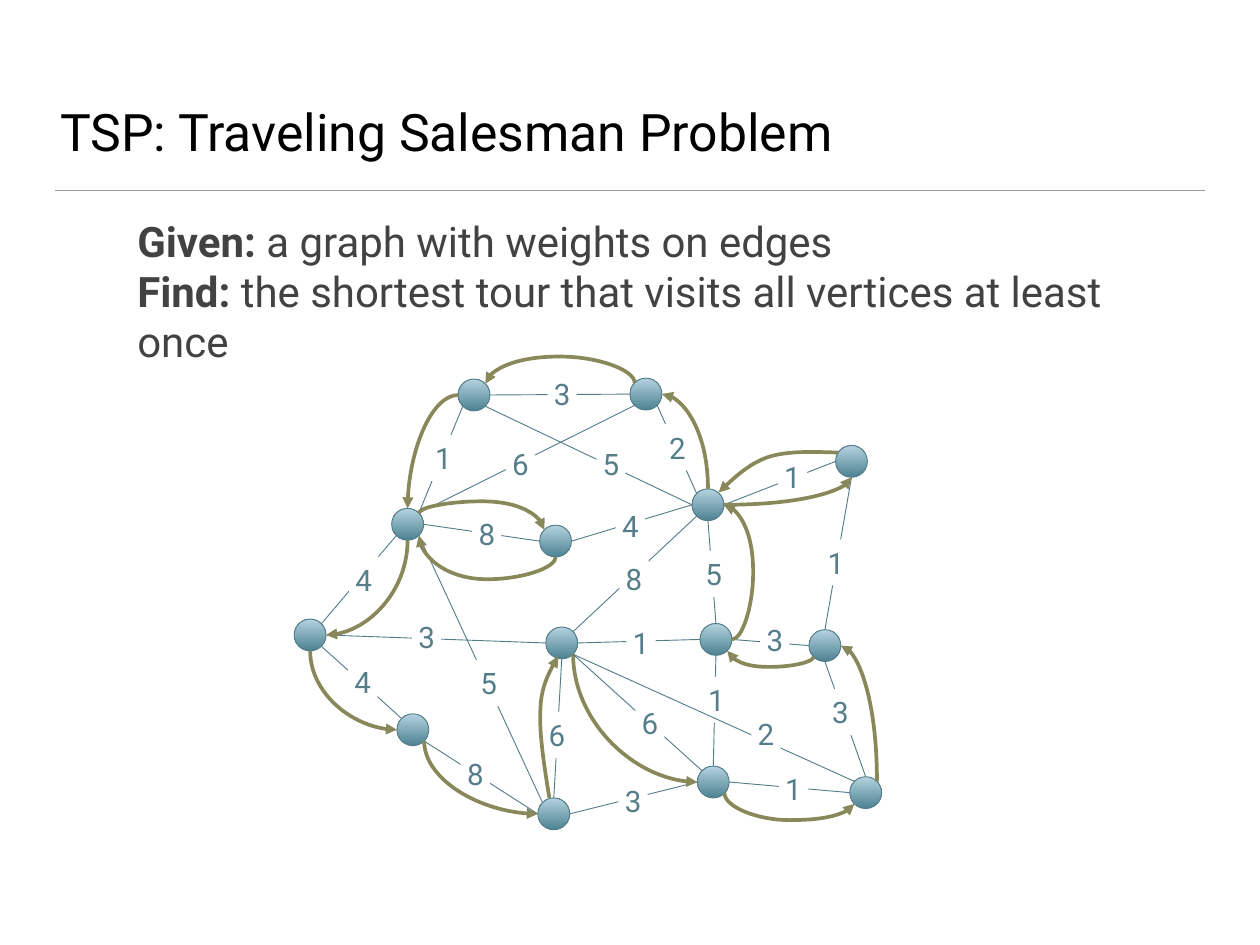
from dataclasses import dataclass
from math import cos, radians, sin

from lxml import etree
from pptx import Presentation
from pptx.dml.color import RGBColor
from pptx.enum.shapes import MSO_CONNECTOR, MSO_SHAPE
from pptx.enum.text import MSO_ANCHOR, PP_ALIGN
from pptx.oxml.ns import qn
from pptx.util import Cm, Pt

STRAIGHT, CURVE = MSO_CONNECTOR.STRAIGHT, MSO_CONNECTOR.CURVE
OVAL, RECTANGLE = MSO_SHAPE.OVAL, MSO_SHAPE.RECTANGLE
TOP, MIDDLE, BOTTOM = MSO_ANCHOR.TOP, MSO_ANCHOR.MIDDLE, MSO_ANCHOR.BOTTOM
LEFT, CENTER = PP_ALIGN.LEFT, PP_ALIGN.CENTER


@dataclass(frozen=True)
class Theme:
    font: str = "Roboto"
    title: str = "000000"
    body: str = "424242"
    weight: str = "557E8A"
    edge: str = "527C88"
    tour: str = "88885A"
    rule: str = "9A9A9A"
    paper: str = "FFFFFF"
    node_dark: str = "4D8292"
    node_light: str = "B4D3DF"
    title_size: float = 42
    body_size: float = 34.1
    weight_size: float = 24
    edge_width: float = 0.75
    rule_width: float = 1
    tour_width: float = 3


THEME = Theme()
RADIUS = 0.18
LABEL_WIDTH, LABEL_HEIGHT = 0.33, 0.52
CURVE_STEPS = 12

NODES = {
    "A": (5.35, 4.46), "B": (7.29, 4.45), "C": (4.6, 5.92), "D": (6.27, 6.11),
    "E": (7.99, 5.7), "F": (9.61, 5.21), "G": (9.31, 7.29), "H": (8.08, 7.22),
    "I": (9.77, 8.95), "J": (8.05, 8.83), "K": (6.34, 7.26), "L": (3.5, 7.17),
    "M": (4.66, 8.24), "N": (6.25, 9.19),
}
SITE_ANGLES = {"r": 0, "br": 45, "b": 90, "bl": 135, "l": 180, "tl": 225, "t": 270, "tr": 315}

EDGES = [
    ("A r", "B l", "3", 6.18, 4.19), ("A bl", "C tr", "1", 4.84, 4.91),
    ("A br", "E l", "5", 6.73, 4.97), ("E tl", "B br", "2", 7.48, 4.79),
    ("C tr", "B bl", "6", 5.71, 4.97), ("C r", "D l", "8", 5.33, 5.77),
    ("E l", "D r", "4", 6.95, 5.68), ("E r", "F l", "1", 8.78, 5.12),
    ("E b", "H t", "5", 7.89, 6.22), ("H r", "G l", "3", 8.58, 6.96),
    ("G t", "F b", "1", 9.27, 6.09), ("I t", "G b", "3", 9.32, 7.78),
    ("I l", "J r", "1", 8.79, 8.65), ("J t", "H b", "1", 7.92, 7.64),
    ("J tl", "K br", "6", 7.17, 7.9), ("N r", "J l", "3", 6.98, 8.78),
    ("K b", "N t", "6", 6.12, 8.04), ("K r", "H l", "1", 7.07, 7),
    ("K tr", "E bl", "8", 6.99, 6.27), ("C br", "N tl", "5", 5.35, 7.45),
    ("N l", "M br", "8", 5.2, 8.48), ("M tl", "L br", "4", 3.93, 7.44),
    ("L tr", "C bl", "4", 3.94, 6.28), ("L r", "K l", "3", 4.65, 6.93),
]
TOP_EDGES = [("I tl", "K br", "2", 8.48, 8.02)]

TOUR_ARCS = [
    ("C tr", "D tl", "vertical", 5.66), ("L b", "M l", "vertical", None),
    ("M br", "N l", "vertical", None), ("K br", "J l", "vertical", None),
    ("J br", "I bl", "vertical", 9.26), ("D b", "C br", "vertical", 6.54),
    ("C b", "L r", "vertical", None), ("E t", "B r", "vertical", None),
    ("B tl", "A tr", "vertical", 4.02), ("I tr", "G r", "vertical", None),
    ("G bl", "H br", "vertical", 7.53), ("H r", "E r", "horizontal", 8.5),
    ("E r", "F b", "horizontal", None), ("A l", "C t", "horizontal", None),
]
TOUR_CURVES = [
    [(6.2, 9.01), (6.14, 8.64), (6.08, 8.26), (6.1, 7.99), (6.11, 7.73), (6.21, 7.57), (6.3, 7.41)],
    [(9.46, 5.11), (9.17, 5.1), (8.89, 5.09), (8.67, 5.16), (8.44, 5.24), (8.28, 5.4), (8.11, 5.56)],
]


def inches(value):
    return Cm(value * 2.54)


def rgb(color):
    return RGBColor.from_string(color)


def anchor(name):
    node, site = name.split()
    x, y = NODES[node]
    angle = radians(SITE_ANGLES[site])
    return x + RADIUS * cos(angle), y + RADIUS * sin(angle)


def style_line(shape, color, width, arrow=False):
    shape.line.color.rgb = rgb(color)
    shape.line.width = Pt(width)
    if arrow:
        etree.SubElement(shape.line._get_or_add_ln(), qn("a:tailEnd"), type="triangle")


def add_line(slide, start, end, color, width, kind=STRAIGHT, arrow=False):
    connector = slide.shapes.add_connector(kind, *map(inches, (*start, *end)))
    style_line(connector, color, width, arrow)
    etree.SubElement(connector._element.spPr, qn("a:effectLst"))
    return connector


def add_tour_arc(slide, start, end, direction, bend):
    connector = add_line(slide, start, end, THEME.tour, THEME.tour_width, CURVE, True)
    axis = 1 if direction == "vertical" else 0
    across, down = end[0] - start[0], end[1] - start[1]
    heading = (end[axis] if bend is None else bend) - start[axis]
    if axis:
        width, height = abs(down), abs(across)
        rotation = 90 if across < 0 and heading > 0 else 270
        flips = (down < 0, across > 0) if rotation == 90 else (down > 0, across < 0)
        connector.left = inches((start[0] + end[0] - width) / 2)
        connector.top = inches((start[1] + end[1] - height) / 2)
        connector.width, connector.height = inches(width), inches(height)
    else:
        rotation = 180 if heading < 0 else 0
        flips = (across > 0, down > 0) if rotation else (across < 0, down < 0)
    transform = connector._element.spPr.find(qn("a:xfrm"))
    transform.set("rot", str(rotation * 60000))
    for name, flipped in zip(("flipH", "flipV"), flips):
        transform.set(name, str(int(flipped)))
    geometry = connector._element.spPr.find(qn("a:prstGeom"))
    if bend is None:
        geometry.set("prst", "curvedConnector2")
    else:
        ratio = round(heading / (end[axis] - start[axis]) * 100000)
        guides = geometry.find(qn("a:avLst"))
        etree.SubElement(guides, qn("a:gd"), name="adj1", fmla=f"val {ratio}")


def bezier_point(controls, t):
    factors = ((1 - t) ** 3, 3 * t * (1 - t) ** 2, 3 * t ** 2 * (1 - t), t ** 3)
    return tuple(sum(f * point[axis] for f, point in zip(factors, controls)) for axis in (0, 1))


def add_tour_curve(slide, controls):
    points = [
        tuple(map(inches, bezier_point(controls[first:first + 4], step / CURVE_STEPS)))
        for first in range(0, len(controls) - 1, 3)
        for step in range(1, CURVE_STEPS + 1)
    ]
    builder = slide.shapes.build_freeform(*map(inches, controls[0]))
    builder.add_line_segments(points, close=False)
    shape = builder.convert_to_shape()
    shape.shadow.inherit = False
    shape.fill.background()
    style_line(shape, THEME.tour, THEME.tour_width, True)


def add_node(slide, center):
    x, y = center
    shape = slide.shapes.add_shape(OVAL, *map(inches, (x - RADIUS, y - RADIUS, 2 * RADIUS, 2 * RADIUS)))
    shape.shadow.inherit = False
    shape.fill.gradient()
    shape.fill.gradient_angle = 90
    for stop, color in zip(shape.fill.gradient_stops, (THEME.node_dark, THEME.node_light)):
        stop.color.rgb = rgb(color)
    style_line(shape, THEME.edge, THEME.edge_width)


def write_text(shape, lines, size, color, position, alignment=LEFT):
    frame = shape.text_frame
    frame.word_wrap = True
    frame.vertical_anchor = position
    frame.margin_left = frame.margin_right = frame.margin_top = frame.margin_bottom = inches(0.06)
    paragraph = frame.paragraphs[0]
    paragraph.alignment = alignment
    for index, line in enumerate(lines):
        if index:
            paragraph.add_line_break()
        for text, bold in line:
            run = paragraph.add_run()
            run.text = text
            run.font.name = THEME.font
            run.font.size = Pt(size)
            run.font.bold = bold
            run.font.color.rgb = rgb(color)


def add_text(slide, box, lines, size, color, position):
    shape = slide.shapes.add_textbox(*map(inches, box))
    write_text(shape, lines, size, color, position)


def add_weight(slide, weight, left, top):
    shape = slide.shapes.add_shape(RECTANGLE, *map(inches, (left, top, LABEL_WIDTH, LABEL_HEIGHT)))
    shape.shadow.inherit = False
    shape.fill.solid()
    shape.fill.fore_color.rgb = rgb(THEME.paper)
    shape.line.fill.background()
    write_text(shape, [[(weight, False)]], THEME.weight_size, THEME.weight, MIDDLE, CENTER)


def add_edges(slide, edges):
    for start, end, *_ in edges:
        add_line(slide, anchor(start), anchor(end), THEME.edge, THEME.edge_width)
    for _, _, weight, left, top in edges:
        add_weight(slide, weight, left, top)


def main():
    presentation = Presentation()
    presentation.slide_width, presentation.slide_height = inches(14.22), inches(10.67)
    slide = presentation.slides.add_slide(presentation.slide_layouts[6])
    add_line(slide, (0.62, 2.15), (13.6, 2.15), THEME.rule, THEME.rule_width)
    add_text(slide, (0.62, 0.36, 12.97, 1.53), [[("TSP: Traveling Salesman Problem", False)]],
             THEME.title_size, THEME.title, BOTTOM)
    add_text(slide, (1.49, 2.37, 12.02, 2.37),
             [[("Given:", True), (" a graph with weights on edges", False)],
              [("Find:", True), (" the shortest tour that visits all vertices at least once", False)]],
             THEME.body_size, THEME.body, TOP)
    for center in NODES.values():
        add_node(slide, center)
    add_edges(slide, EDGES)
    for start, end, direction, bend in TOUR_ARCS:
        add_tour_arc(slide, anchor(start), anchor(end), direction, bend)
    for controls in TOUR_CURVES:
        add_tour_curve(slide, controls)
    add_edges(slide, TOP_EDGES)
    presentation.save("out.pptx")


if __name__ == "__main__":
    main()
